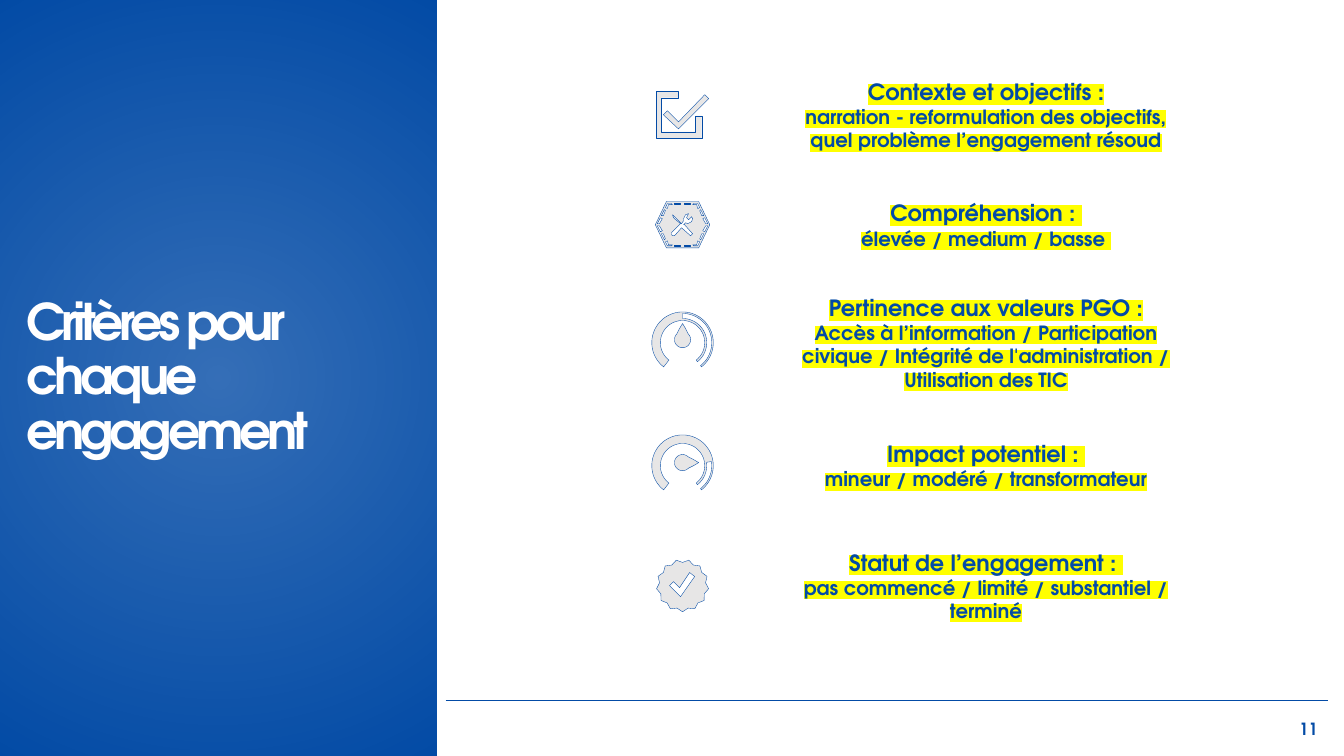
import copy
import math
from dataclasses import dataclass

import pptx
import pptx.dml.color
import pptx.enum.shapes
import pptx.enum.text
import pptx.oxml
import pptx.oxml.ns
import pptx.util

PX = 9144  # EMU in one px (100 px to the inch)
ICON_X = 677
TEXT_X, TEXT_WIDTH, TEXT_HEIGHT = 785, 386, 48


@dataclass(frozen=True)
class Theme:
    font: str = "TeX Gyre Adventor"
    blue: str = "034BA6"
    white: str = "FFFFFF"
    icon: str = "E7E6E6"
    highlight: str = "FFFF00"
    title_size: int = 36
    heading_size: int = 16
    detail_size: int = 14
    number_size: int = 12


THEME = Theme()
ALIGN = pptx.enum.text.PP_ALIGN


def px(length):
    return pptx.util.Emu(round(length * PX))


def rgb(value):
    return pptx.dml.color.RGBColor.from_string(value)


def drawing_xml(tag, content="", attributes=""):
    namespace = pptx.oxml.ns.nsdecls("a")
    return pptx.oxml.parse_xml(f"<a:{tag} {namespace} {attributes}>{content}</a:{tag}>")


def format_run(run, size, color):
    run.font.name = THEME.font
    run.font.size = pptx.util.Pt(size)
    run.font.bold = True
    run.font.color.rgb = rgb(color)


def highlight_run(run):
    color = f'<a:srgbClr val="{THEME.highlight}"/>'
    fill = run.font._element.find(pptx.oxml.ns.qn("a:solidFill"))
    fill.addnext(drawing_xml("highlight", color))


def prepare_frame(shape):
    frame = shape.text_frame
    frame.word_wrap = True
    frame.auto_size = pptx.enum.text.MSO_AUTO_SIZE.NONE
    frame.vertical_anchor = pptx.enum.text.MSO_ANCHOR.MIDDLE
    return frame


# Icon outlines, relative to the icon centre
def arc(radius, start, end, center_y=0):
    steps = max(2, round(abs(end - start) / 5))
    angles = [math.radians(start + (end - start) * i / steps) for i in range(steps + 1)]
    return [(radius * math.cos(a), center_y + radius * math.sin(a)) for a in angles]


def checkbox_icon():
    tick = [(22, -20), (26, -16), (-4, 14), (-19, 0), (-15, -4), (-4, 7)]
    frame = [(-26, -23), (-4, -23), (-4, -17), (-21, -17), (-21, 17),
             (13, 17), (13, 1), (19, 1), (19, 23), (-26, 23)]
    return [tick, frame]


def tools_icon():
    hexagon = [(-16, -23), (16, -23), (27, 0), (16, 23), (-16, 23), (-27, 0)]
    corner_dashes = [
        [(-8, -21), (-8, -20), (-2, -20), (-2, -21)],
        [(-15, -21), (-17, -17), (-15, -16), (-14, -20), (-10, -20), (-11, -21)],
        [(-18, -15), (-21, -9), (-19, -9), (-17, -14)],
        [(-22, -7), (-25, -1), (-23, -1), (-20, -6)],
    ]
    dashes = [[(x * side, y * level) for x, y in dash]
              for side in (1, -1) for level in (1, -1) for dash in corner_dashes]
    tools = [(6, -11), (3, -10), (1, -6), (1, -4), (-1, -1), (-7, -7), (-10, -10),
             (-9, -7), (-8, -6), (-2, -1), (-11, 8), (-11, 10), (-9, 11), (-8, 11),
             (-1, 3), (8, 11), (10, 9), (2, 0), (1, 0), (3, -2), (5, -1), (9, -3),
             (10, -6), (9, -8), (6, -5), (4, -7)]
    return [hexagon, *dashes, tools]


def gauge_icon(level, needle):
    """Dial filled up to the level angle, with a drop pointing along needle."""
    start, end = 128, 412
    dial = (arc(30.5, start, end) + arc(29, end, level)
            + arc(24, level, end) + arc(22, end, start))
    drop_y = -3
    drop = [(16, 0), (11, 3), *arc(8, 45, 315), (11, -3)]
    turn = math.radians(needle)
    drop = [(x * math.cos(turn) - y * math.sin(turn),
             drop_y + x * math.sin(turn) + y * math.cos(turn)) for x, y in drop]
    return [dial, drop]


def badge_icon():
    tips = 13
    seal = []
    for i in range(2 * tips):
        radius = 23 if i % 2 else 26
        angle = math.radians(90 + 180 * i / tips)
        seal.append((radius * math.cos(angle), radius * math.sin(angle)))
    tick = [(7, -13), (-3, 2), (-9, -4), (-13, 0), (-2, 11), (12, -9)]
    return [seal, tick]


# Slide elements
def add_icon(shapes, center_y, outlines):
    builder = None
    for outline in outlines:
        points = [(px(ICON_X + x), px(center_y + y)) for x, y in outline]
        if builder is None:
            builder = shapes.build_freeform(*points[0], scale=1.0)
        else:
            builder.move_to(*points[0])
        builder.add_line_segments(points[1:], close=True)
    icon = builder.convert_to_shape()
    icon.shadow.inherit = False
    icon.fill.solid()
    icon.fill.fore_color.rgb = rgb(THEME.icon)
    icon.line.color.rgb = rgb(THEME.blue)
    icon.line.width = pptx.util.Pt(0.25)


def add_criterion(slide, center_y, outlines, text):
    """Text holds a heading and details, split by a line break or a paragraph."""
    shapes = slide.shapes.add_group_shape().shapes
    box = shapes.add_textbox(px(TEXT_X), px(center_y - TEXT_HEIGHT / 2),
                             px(TEXT_WIDTH), px(TEXT_HEIGHT))
    frame = prepare_frame(box)
    frame.text = text
    runs = [run for paragraph in frame.paragraphs for run in paragraph.runs]
    for run, size in zip(runs, (THEME.heading_size, THEME.detail_size)):
        format_run(run, size, THEME.blue)
        highlight_run(run)
    for paragraph in frame.paragraphs:
        paragraph.alignment = ALIGN.CENTER
        for line_break in paragraph._p.findall(pptx.oxml.ns.qn("a:br")):
            line_break.append(copy.deepcopy(runs[0].font._element))
    add_icon(shapes, center_y, outlines)


def add_panel(slide):
    panel = slide.shapes.add_shape(pptx.enum.shapes.MSO_SHAPE.RECTANGLE,
                                   0, 0, px(433), px(750))
    panel.shadow.inherit = False
    panel.line.fill.background()
    panel.fill.background()
    color = f'<a:srgbClr val="{THEME.blue}">'
    gradient = drawing_xml("gradFill", f"""<a:gsLst>
        <a:gs pos="0">{color}<a:alpha val="80000"/></a:srgbClr></a:gs>
        <a:gs pos="100000">{color}</a:srgbClr></a:gs></a:gsLst>
        <a:path path="circle">
        <a:fillToRect l="50000" t="50000" r="50000" b="50000"/></a:path>""")
    properties = panel.element.spPr
    properties.replace(properties.find(pptx.oxml.ns.qn("a:noFill")), gradient)


def add_footer_line(slide):
    line = slide.shapes.add_connector(pptx.enum.shapes.MSO_CONNECTOR.STRAIGHT,
                                      px(442), px(695), px(1317), px(695))
    line.line.color.rgb = rgb(THEME.blue)
    line.line.width = pptx.util.Pt(0.75)
    line.element.spPr.append(drawing_xml("effectLst"))


def place_title(slide, text):
    title = slide.shapes.title
    title.left, title.top, title.width, title.height = map(px, (16, 221, 399, 309))
    frame = prepare_frame(title)
    frame.text = text
    paragraph = frame.paragraphs[0]
    paragraph.alignment = ALIGN.LEFT
    paragraph.line_spacing = 0.9
    run = paragraph.runs[0]
    format_run(run, THEME.title_size, THEME.white)
    run.font._element.set("spc", "-300")
    title.element.getparent().append(title.element)  # in front of the panel


def add_page_number(slide, number):
    box = slide.shapes.add_textbox(px(961), px(703), px(356), px(40))
    frame = prepare_frame(box)
    frame.text = number
    frame.paragraphs[0].alignment = ALIGN.RIGHT
    format_run(frame.paragraphs[0].runs[0], THEME.number_size, THEME.blue)


def main():
    presentation = pptx.Presentation()
    presentation.slide_width, presentation.slide_height = px(1333), px(750)
    slide = presentation.slides.add_slide(presentation.slide_layouts[5])

    # Frame of the slide
    add_panel(slide)
    add_footer_line(slide)
    place_title(slide, "Critères pour chaque engagement")
    add_page_number(slide, "11")

    # Criteria: row centre, icon, text
    criteria = [
        (114, checkbox_icon(), "Contexte et objectifs :\vnarration - reformulation "
         "des objectifs, quel problème l’engagement résoud"),
        (223, tools_icon(), "Compréhension : \vélevée / medium / basse "),
        (340, gauge_icon(270, -90), "Pertinence aux valeurs PGO :\nAccès à l’information / "
         "Participation civique / Intégrité de l'administration / Utilisation des TIC"),
        (462, gauge_icon(352, 0), "Impact potentiel : \nmineur / modéré / transformateur"),
        (581, badge_icon(), "Statut de l’engagement : \vpas commencé / limité / "
         "substantiel / terminé"),
    ]
    for center_y, outlines, text in criteria:
        add_criterion(slide, center_y, outlines, text)

    presentation.save("out.pptx")


if __name__ == "__main__":
    main()
